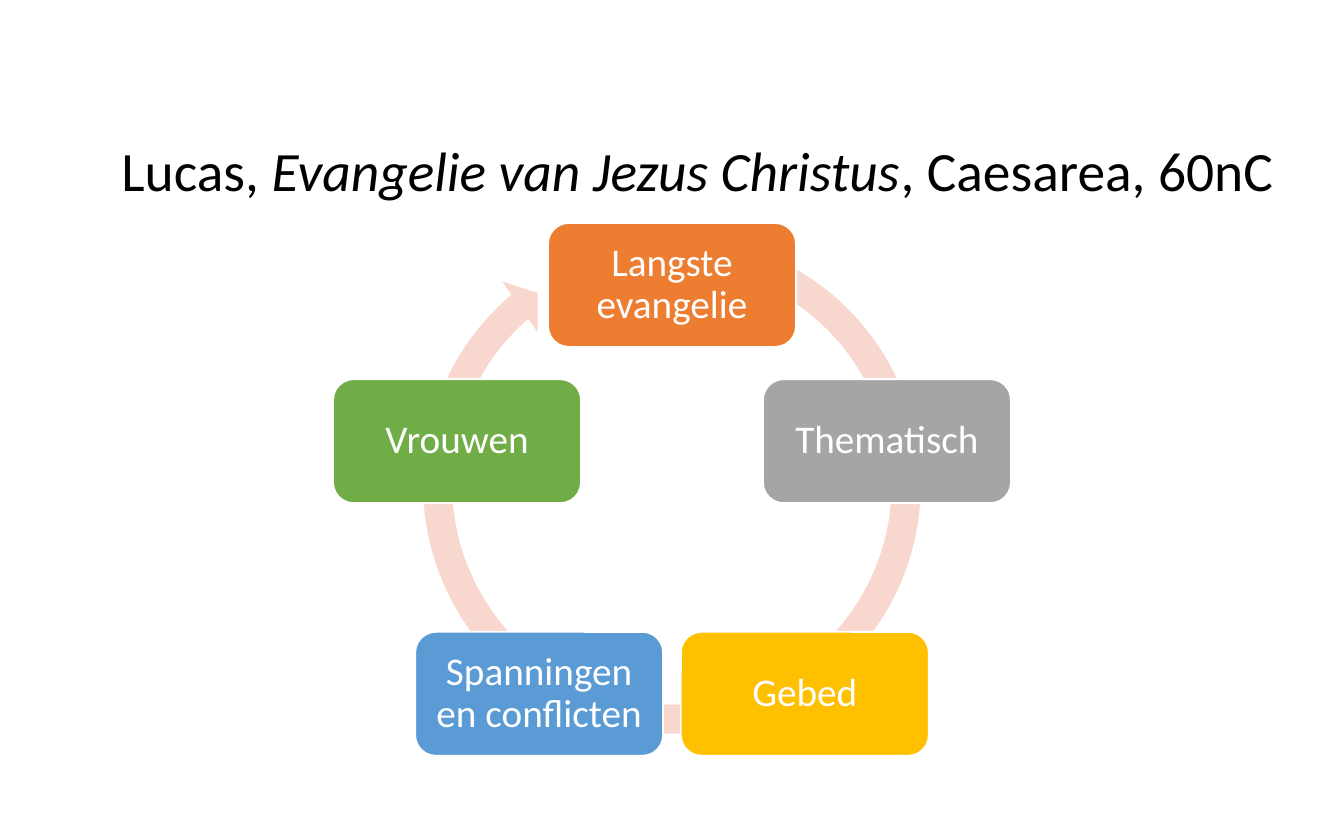
from math import cos, pi, sin

from pptx import Presentation
from pptx.dml.color import RGBColor
from pptx.enum.shapes import MSO_SHAPE
from pptx.enum.text import MSO_ANCHOR, MSO_AUTO_SIZE, PP_ALIGN
from pptx.util import Pt

SCALE = 914400 / 134.4  # EMU per px
COLORS = {
    "black": "000000", "white": "FFFFFF", "ring": "F8D7CE", "orange": "ED7D31",
    "grey": "A5A5A5", "yellow": "FFC000", "blue": "5B9BD5", "green": "70AD47",
}
TITLE = [("Lucas, ", False), ("Evangelie van Jezus Christus", True),
         (", Caesarea, 60nC", False)]
TOPICS = [("Langste evangelie", "orange"), ("Thematisch", "grey"),
          ("Gebed", "yellow"), ("Spanningen en conflicten", "blue"),
          ("Vrouwen", "green")]
CENTER_X, CENTER_Y, RADIUS = 672, 511, 226
BOX_WIDTH, BOX_HEIGHT = 248, 124


def emu(px):
    return round(px * SCALE)


def color(name):
    return RGBColor.from_string(COLORS[name])


def apply(target, values):
    for name, value in values.items():
        setattr(target, name, value)


class SlideBuilder:
    font = "Calibri"
    frame_format = {"word_wrap": True, "auto_size": MSO_AUTO_SIZE.NONE,
                    "vertical_anchor": MSO_ANCHOR.MIDDLE}
    para_format = {"alignment": PP_ALIGN.CENTER, "line_spacing": 0.9}

    def __init__(self, page):
        self.page = page

    def add_text(self, box, spans, size, ink):
        """Fill a box with one centred paragraph of (text, italic) spans."""
        apply(box.text_frame, self.frame_format)
        para = box.text_frame.paragraphs[0]
        apply(para, self.para_format)
        for text, italic in spans:
            span = para.add_run()
            span.text = text
            apply(span.font, {"name": self.font, "size": Pt(size), "italic": italic})
            span.font.color.rgb = color(ink)

    def title(self, spans, left, top, width, height):
        box = self.page.shapes.title
        apply(box, {"left": emu(left), "top": emu(top),
                    "width": emu(width), "height": emu(height)})
        self.add_text(box, spans, 29.7, "black")

    def shape(self, kind, left, top, width, height, fill):
        box = self.page.shapes.add_shape(
            kind, emu(left), emu(top), emu(width), emu(height))
        box.shadow.inherit = False
        box.fill.solid()
        box.fill.fore_color.rgb = color(fill)
        return box

    def circular_arrow(self, left, top, size, fill):
        arrow = self.shape(MSO_SHAPE.CIRCULAR_ARROW, left, top, size, size, fill)
        arrow.line.fill.background()
        # band width, head angle, end angle, start angle, head width
        for index, value in enumerate([0.055, 3.307, 137.715, 173.886, 0.058]):
            arrow.adjustments[index] = value

    def topic(self, text, center_x, center_y, fill):
        box = self.shape(MSO_SHAPE.ROUNDED_RECTANGLE, center_x - BOX_WIDTH / 2,
                         center_y - BOX_HEIGHT / 2, BOX_WIDTH, BOX_HEIGHT, fill)
        box.line.color.rgb = color("white")
        box.line.width = Pt(1)
        margins = ("margin_left", "margin_top", "margin_right", "margin_bottom")
        apply(box.text_frame, dict.fromkeys(margins, emu(12)))
        self.add_text(box, [(text, False)], 21, "white")


def main():
    deck = Presentation()
    apply(deck, {"slide_width": emu(1344), "slide_height": emu(840)})
    builder = SlideBuilder(deck.slides.add_slide(deck.slide_layouts[5]))
    builder.title(TITLE, 67, 124, 1261, 99)
    builder.circular_arrow(407, 220, 530, "ring")
    for index, (text, fill) in enumerate(TOPICS):
        angle = 2 * pi * index / len(TOPICS)
        builder.topic(text, CENTER_X + RADIUS * sin(angle),
                      CENTER_Y - RADIUS * cos(angle), fill)
    deck.save("out.pptx")


if __name__ == "__main__":
    main()
